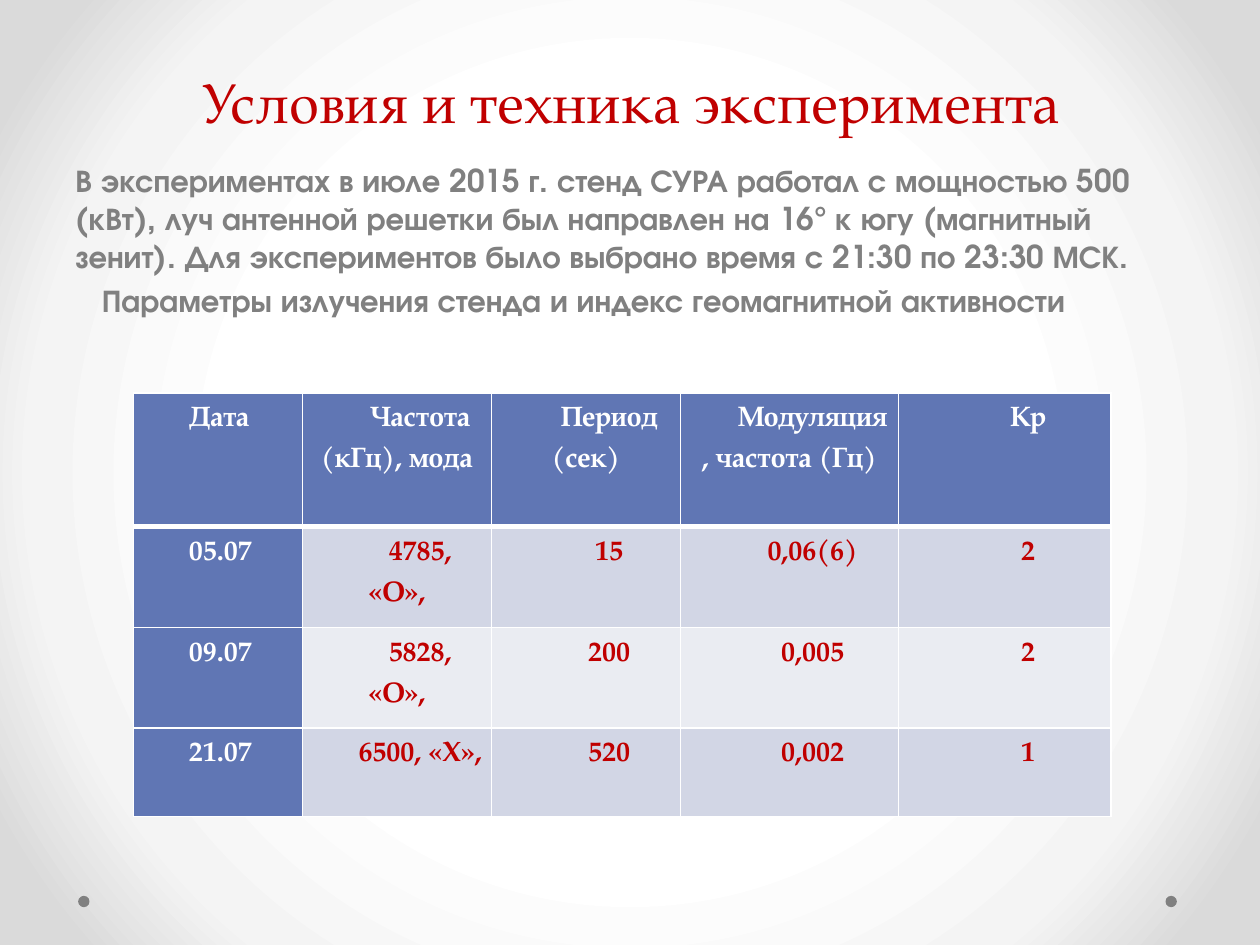
from dataclasses import dataclass

from pptx import Presentation
from pptx.dml.color import RGBColor
from pptx.enum.shapes import MSO_SHAPE
from pptx.enum.text import MSO_ANCHOR, PP_ALIGN
from pptx.oxml import parse_xml
from pptx.oxml.ns import nsdecls
from pptx.util import Inches, Pt


@dataclass(frozen=True)
class Theme:
    serif: str = "TeX Gyre Pagella"
    sans: str = "TeX Gyre Adventor"
    red: str = "C00000"
    gray: str = "808080"
    white: str = "FFFFFF"
    blue: str = "6076B4"
    bands: tuple = ("D2D6E5", "EAECF2")
    glow: tuple = ((50, "FFFFFF"), (76, "F4F4F4"), (92, "DADADA"))
    title: int = 32
    body: int = 18
    cell: int = 16


T = Theme()

TITLE = "Условия и техника эксперимента"
BODY = (
    "В экспериментах в июле 2015 г. стенд СУРА работал с мощностью 500 (кВт), "
    "луч антенной решетки был направлен на 16° к югу (магнитный зенит). "
    "Для экспериментов было выбрано время с 21:30 по 23:30 МСК.",
    "Параметры излучения стенда и индекс геомагнитной активности",
)
ROWS = (
    ("Дата", "Частота (кГц), мода", "Период (сек)", "Модуляция, частота (Гц)", "Кр"),
    ("05.07", "4785, «О»,", "15", "0,06(6)", "2"),
    ("09.07", "5828, «О»,", "200", "0,005", "2"),
    ("21.07", "6500, «X»,", "520", "0,002", "1"),
)
COL_WIDTHS = (1.34, 1.5, 1.5, 1.73, 1.69)
ROW_HEIGHTS = (1.06, 0.7, 0.7, 0.7)


def set_font(p, name, size, color, bold=False):
    f = p.font
    f.name, f.size, f.bold = name, Pt(size), bold
    f.color.rgb = RGBColor.from_string(color)


def add_background(s):
    """Radial glow, white in the middle and gray at the corners."""
    stops = "".join(
        f'<a:gs pos="{pos * 1000}"><a:srgbClr val="{color}"/></a:gs>'
        for pos, color in T.glow)
    s.element.cSld.insert(0, parse_xml(
        f'<p:bg {nsdecls("p", "a")}><p:bgPr><a:gradFill rotWithShape="1">'
        f'<a:gsLst>{stops}</a:gsLst><a:path path="circle">'
        '<a:fillToRect l="50000" t="50000" r="50000" b="50000"/></a:path>'
        '</a:gradFill><a:effectLst/></p:bgPr></p:bg>'))


def add_dots(s, left, top, width, size):
    """One dot at each end of the given width."""
    for x in (left, left + width - size):
        sp = s.shapes.add_shape(
            MSO_SHAPE.OVAL, Inches(x), Inches(top), Inches(size), Inches(size))
        sp.shadow.inherit = False
        sp.fill.solid()
        sp.fill.fore_color.rgb = RGBColor.from_string(T.gray)
        sp.line.fill.background()


def add_text_frame(s, box):
    tf = s.shapes.add_textbox(*map(Inches, box)).text_frame
    tf.word_wrap = True
    return tf


def add_title(s, *box):
    tf = add_text_frame(s, box)
    tf.vertical_anchor = MSO_ANCHOR.BOTTOM
    p = tf.paragraphs[0]
    p.text = TITLE
    p.alignment = PP_ALIGN.CENTER
    p.line_spacing = Pt(58)
    set_font(p, T.serif, T.title, T.red)


def add_body(s, *box):
    tf = add_text_frame(s, box)
    for i, text in enumerate(BODY):
        p = tf.add_paragraph() if i else tf.paragraphs[0]
        p.text = text
        p.space_before = Pt(T.body * 0.2)
        set_font(p, T.sans, T.body, T.gray, bold=True)
    p._p.get_or_add_pPr().set("marL", str(Inches(0.21)))


def set_borders(cell, **widths):
    """Draw white borders; the keys L, R, T and B give widths in points."""
    tc_pr = cell._tc.get_or_add_tcPr()
    for i, (side, width) in enumerate(widths.items()):
        tc_pr.insert(i, parse_xml(
            f'<a:ln{side} {nsdecls("a")} w="{Pt(width)}"><a:solidFill>'
            f'<a:srgbClr val="{T.white}"/></a:solidFill></a:ln{side}>'))


def fill_cell(cell, text, row, col):
    heading = row == 0 or col == 0
    cell.margin_left = cell.margin_right = Inches(0.07)
    cell.margin_top = cell.margin_bottom = 0
    cell.fill.solid()
    cell.fill.fore_color.rgb = RGBColor.from_string(
        T.blue if heading else T.bands[(row - 1) % 2])
    set_borders(cell, L=1, R=1, T=3 if row == 1 else 1, B=3 if row == 0 else 1)
    p = cell.text_frame.paragraphs[0]
    p.text = text
    p.alignment = PP_ALIGN.CENTER if col else PP_ALIGN.LEFT
    p.line_spacing = 1.5
    p._p.get_or_add_pPr().set("indent", str(Inches(0.37)))
    set_font(p, T.serif, T.cell, T.white if heading else T.red, bold=True)


def add_parameters(s, left, top):
    table = s.shapes.add_table(
        len(ROWS), len(COL_WIDTHS), Inches(left), Inches(top),
        Inches(sum(COL_WIDTHS)), Inches(sum(ROW_HEIGHTS))).table
    for column, width in zip(table.columns, COL_WIDTHS):
        column.width = Inches(width)
    for r, (height, texts) in enumerate(zip(ROW_HEIGHTS, ROWS)):
        table.rows[r].height = Inches(height)
        for c, text in enumerate(texts):
            fill_cell(table.cell(r, c), text, r, c)


def main():
    prs = Presentation()
    prs.slide_width, prs.slide_height = Inches(10), Inches(7.5)
    s = prs.slides.add_slide(prs.slide_layouts[6])
    add_background(s)
    add_dots(s, 0.62, 7.11, 8.72, 0.09)
    add_title(s, 0.51, 0.36, 9, 0.76)
    add_body(s, 0.5, 1.23, 9, 5.47)
    add_parameters(s, 1.06, 3.12)
    prs.save("out.pptx")


if __name__ == "__main__":
    main()
